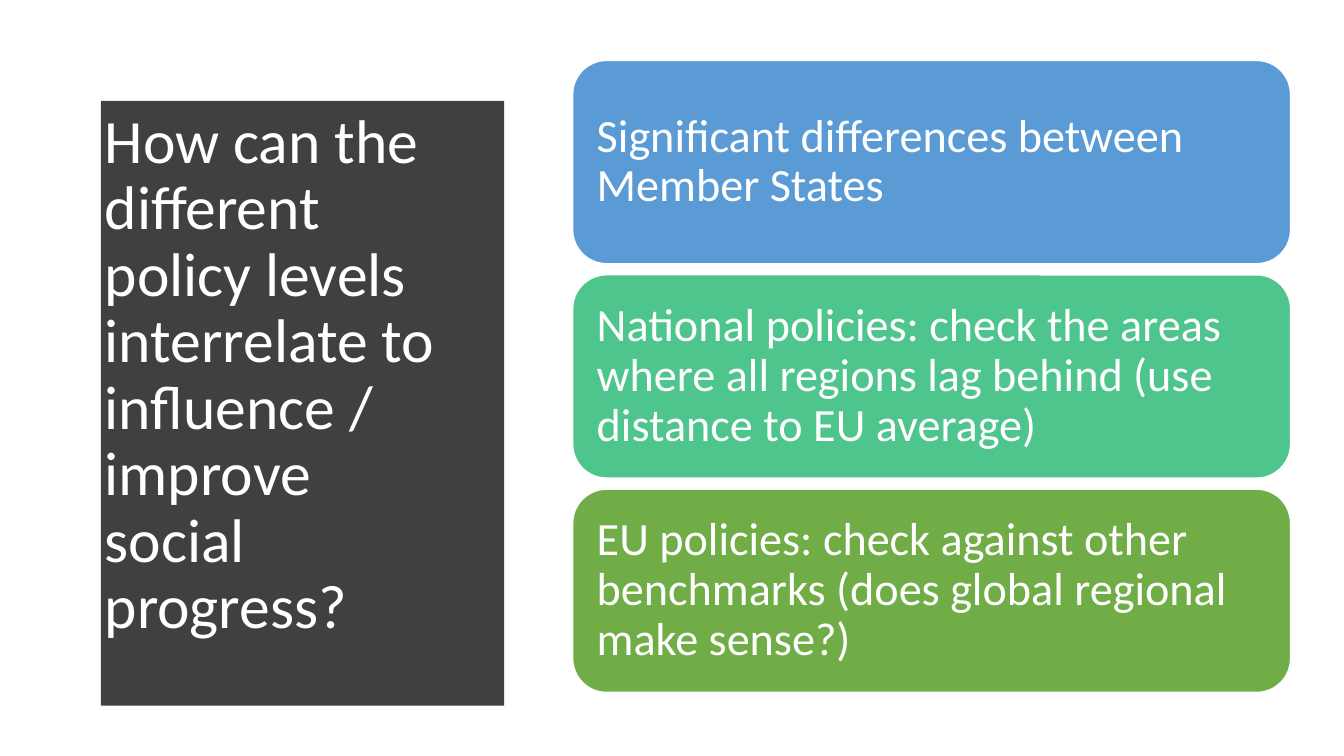
from pptx import Presentation
from pptx import util as u
from pptx.dml.color import RGBColor
from pptx.enum import shapes, text

FONT = "Calibri"
WHITE = "FFFFFF"
QUESTION = ("How can the different policy levels interrelate "
            "to influence / improve social progress?")
ANSWERS = [
    ("Significant differences between Member States", "5B9BD5"),
    ("National policies: check the areas where all regions lag behind "
     "(use distance to EU average)", "4DC58D"),
    ("EU policies: check against other benchmarks "
     "(does global regional make sense?)", "70AD47"),
]


def paint(fill, color):
    """Give a fill one solid colour."""
    fill.solid()
    fill.fore_color.rgb = RGBColor.from_string(color)


def write(shape, words, size, inset_x, inset_y):
    """Write white, left-aligned, vertically centred text in a shape."""
    frame = shape.text_frame
    frame.word_wrap = True
    frame.vertical_anchor = text.MSO_ANCHOR.MIDDLE
    frame.margin_left = frame.margin_right = u.Inches(inset_x)
    frame.margin_top = frame.margin_bottom = u.Inches(inset_y)
    para = frame.paragraphs[0]
    para.alignment = text.PP_ALIGN.LEFT
    para.line_spacing = 0.9
    span = para.add_run()
    span.text = words
    span.font.name = FONT
    span.font.size = u.Pt(size)
    paint(span.font.fill, WHITE)


def add_question_panel(page, left, top, width, height):
    """Draw the dark panel with a bulging right side, and its question."""
    bulge, steps = 0.24, 40
    edge = []
    for step in range(steps + 1):
        offset = 2 * step / steps - 1
        edge.append((left + width - bulge * offset ** 2,
                     top + height * step / steps))
    outline = page.shapes.build_freeform(
        u.Inches(left), u.Inches(top), scale=u.Inches(1))
    outline = page.shapes.build_freeform(left, top, scale=u.Inches(1))
    outline.add_line_segments(edge + [(left, top + height)], close=True)
    panel = outline.convert_to_shape()
    panel.shadow.inherit = False
    paint(panel.fill, "404040")
    panel.line.fill.background()

    box = page.shapes.add_textbox(
        u.Inches(left + 0.41), u.Inches(top + 0.59),
        u.Inches(3.74), u.Inches(height - 1.2))
    write(box, QUESTION, 44, 0.1, 0)


def add_answer_stack(page, left, top, width, height):
    """Stack the answers as equal rounded cards that fill the box."""
    gap = 0.11
    card_height = (height - gap * (len(ANSWERS) - 1)) / len(ANSWERS)
    for index, (words, color) in enumerate(ANSWERS):
        card = page.shapes.add_shape(
            shapes.MSO_SHAPE.ROUNDED_RECTANGLE,
            u.Inches(left), u.Inches(top + index * (card_height + gap)),
            u.Inches(width), u.Inches(card_height))
        card.shadow.inherit = False
        paint(card.fill, color)
        paint(card.line.fill, WHITE)
        card.line.width = u.Pt(1)
        write(card, words, 33, 0.14, 0.14)


def main():
    """Build the slide and save the deck."""
    deck = Presentation()
    deck.slide_width = u.Inches(13.33)
    deck.slide_height = u.Inches(7.5)
    page = deck.slides.add_slide(deck.slide_layouts[6])
    add_question_panel(page, 0.53, 0.52, 4.79, 6.44)
    add_answer_stack(page, 5.68, 0.6, 7.12, 6.27)
    deck.save("out.pptx")


if __name__ == "__main__":
    main()
